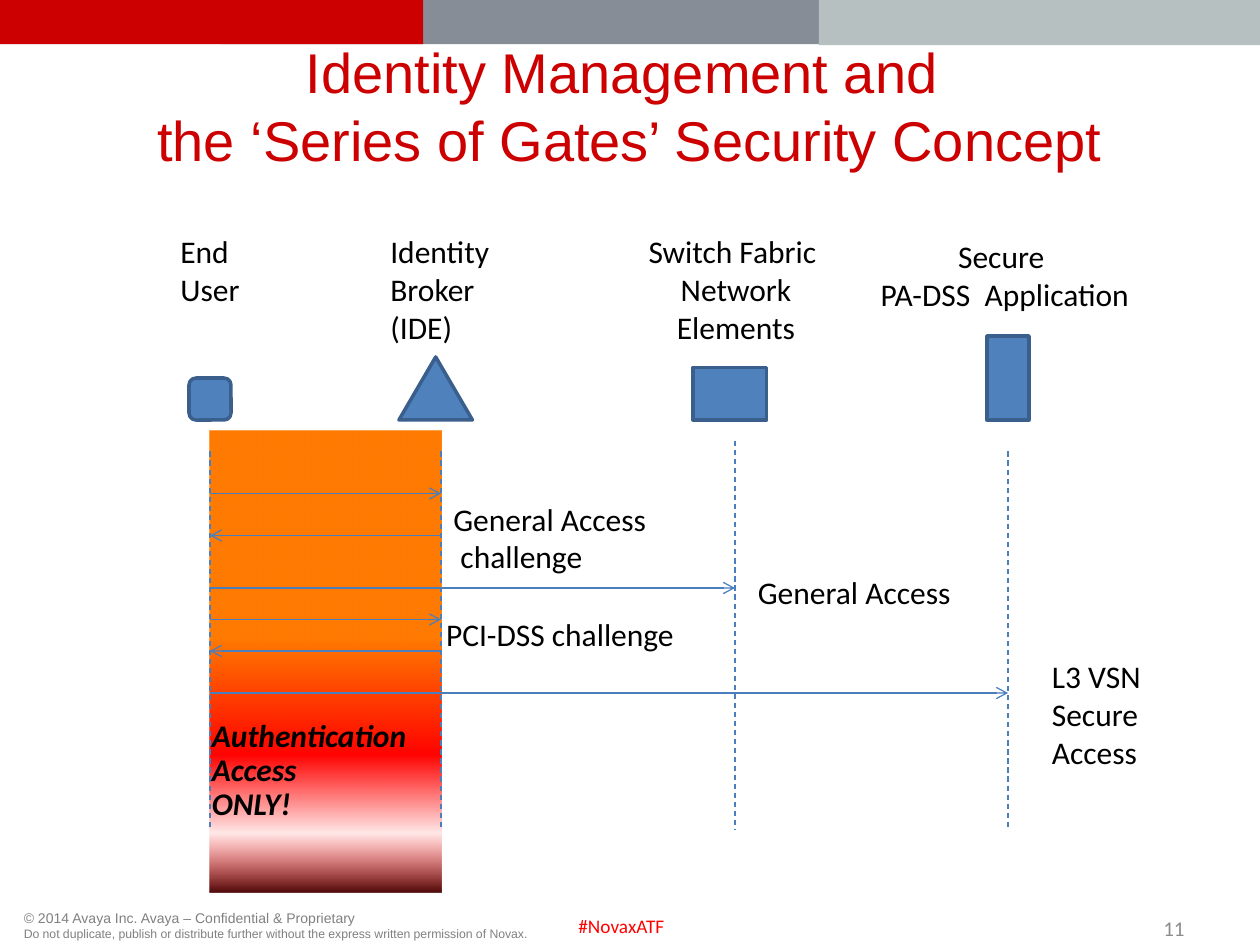
import pptx
import pptx.dml.color
import pptx.enum.dml
import pptx.enum.shapes
import pptx.enum.text
import pptx.oxml
import pptx.oxml.ns
import pptx.util
from lxml import etree

COLS, ROWS = 120, 90
SHAPE = pptx.enum.shapes.MSO_SHAPE
ALIGN = pptx.enum.text.PP_ALIGN
ANCHOR = pptx.enum.text.MSO_ANCHOR
AUTO = pptx.enum.text.MSO_AUTO_SIZE


def rgb(value):
    return pptx.dml.color.RGBColor.from_string(value)


class Diagram:
    red, black, gray = "CC0000", "000000", "808080"
    blue, outline, wire = "4F81BD", "3A5F8C", "4B7EBC"
    body, heading = "Calibri", "Arial"

    def __init__(self, prs):
        self.cell_w = prs.slide_width / COLS
        self.cell_h = prs.slide_height / ROWS
        self.s = prs.slides.add_slide(prs.slide_layouts[6])

    def x(self, cols):
        return round(cols * self.cell_w)

    def y(self, rows):
        return round(rows * self.cell_h)

    def box(self, left, top, width, height):
        return self.x(left), self.y(top), self.x(width), self.y(height)

    def shape(self, kind, left, top, width, height, fill, line=None):
        sp = self.s.shapes.add_shape(kind, *self.box(left, top, width, height))
        sp.shadow.inherit = False
        sp.fill.solid()
        sp.fill.fore_color.rgb = rgb(fill)
        if line:
            sp.line.color.rgb = rgb(line)
            sp.line.width = pptx.util.Pt(2)
        else:
            sp.line.fill.background()
        return sp

    def gradient(self, left, top, width, height, stops):
        sp = self.shape(SHAPE.RECTANGLE, left, top, width, height, stops[0][1])
        sp.fill.gradient()
        sp.fill.gradient_angle = 270
        gs_list = sp.fill._fill._gradFill.find(pptx.oxml.ns.qn("a:gsLst"))
        for gs in list(gs_list):
            gs_list.remove(gs)
        for position, color, opacity in stops:
            gs = etree.SubElement(gs_list, pptx.oxml.ns.qn("a:gs"), pos=str(position * 1000))
            clr = etree.SubElement(gs, pptx.oxml.ns.qn("a:srgbClr"), val=color)
            if opacity < 100:
                etree.SubElement(clr, pptx.oxml.ns.qn("a:alpha"), val=str(opacity * 1000))

    def text(self, left, top, width, height, lines, size=18, color=black, font=body,
             align=ALIGN.LEFT, anchor=ANCHOR.TOP, wrap=False, grow=True,
             emphasis=False, spacing=None):
        tf = self.s.shapes.add_textbox(*self.box(left, top, width, height)).text_frame
        tf.word_wrap = wrap
        tf.auto_size = AUTO.SHAPE_TO_FIT_TEXT if grow else AUTO.NONE
        tf.vertical_anchor = anchor
        for i, line in enumerate(lines):
            p = tf.add_paragraph() if i else tf.paragraphs[0]
            p.text = line
            p.alignment = align
            if spacing:
                p.line_spacing = spacing
            p.font.name = font
            p.font.size = pptx.util.Pt(size)
            p.font.color.rgb = rgb(color)
            if emphasis:
                p.font.bold = p.font.italic = True
        return tf

    def line(self, x1, y1, x2, y2, dashed=False, arrow=False):
        c = self.s.shapes.add_connector(
            pptx.enum.shapes.MSO_CONNECTOR.STRAIGHT,
            self.x(x1), self.y(y1), self.x(x2), self.y(y2))
        c.line.color.rgb = rgb(self.wire)
        c.line.width = pptx.util.Pt(0.75)
        if dashed:
            c.line.dash_style = pptx.enum.dml.MSO_LINE.DASH
        if arrow:
            etree.SubElement(c.line._get_or_add_ln(), pptx.oxml.ns.qn("a:tailEnd"), type="arrow")
        etree.SubElement(c._element.spPr, pptx.oxml.ns.qn("a:effectLst"))


def main():
    prs = pptx.Presentation()
    prs.slide_width = pptx.util.Inches(10)
    prs.slide_height = pptx.util.Inches(7.5)
    d = Diagram(prs)

    for left, width, height, fill in [(21, 57, 4.2, "868D96"),
                                      (78, 42, 4.3, "B7C0C0"),
                                      (0, 40.3, 4.2, d.red)]:
        d.shape(SHAPE.RECTANGLE, left, 0, width, height, fill)

    tf = d.text(1.08, 86, 52, 4,
                ["© 2014 Avaya Inc. Avaya – Confidential & Proprietary",
                 "Do not duplicate, publish or distribute further without "
                 "the express written permission of Novax."],
                size=8, color=d.gray, font=d.heading, wrap=True, grow=False)
    tf.paragraphs[1].font.size = pptx.util.Pt(7)
    d.text(53.9, 86.5, 12.1, 3.5, ["#NovaxATF"], size=11, color="FF0000")
    d.text(86, 86.75, 28, 3.25, ["11"], size=12, color="8C8C8C",
           align=ALIGN.RIGHT, anchor=ANCHOR.MIDDLE, wrap=True, grow=False)

    user, broker, network, application = 20, 42, 70, 96
    d.gradient(user, 41, broker - user, 44,
               [(45, "FF7A00", 100), (70, "FF0300", 100),
                (87, "FF0000", 9), (100, "4D0808", 100)])
    d.text(6, 6, 108, 8,
           ["Identity Management and \vthe ‘Series of Gates’ Security Concept"],
           size=32, color=d.red, font=d.heading, align=ALIGN.CENTER,
           anchor=ANCHOR.MIDDLE, wrap=True, grow=False)

    for actor, top in [(user, 43), (broker, 43), (network, 42), (application, 43)]:
        d.line(actor, top, actor, 79, dashed=True)

    icon_base = 40
    for kind, left, width, height in [(SHAPE.ROUNDED_RECTANGLE, 18, 4, 4),
                                      (SHAPE.ISOSCELES_TRIANGLE, 38, 7, 6),
                                      (SHAPE.RECTANGLE, 66, 7, 5),
                                      (SHAPE.RECTANGLE, 94, 4, 8)]:
        d.shape(kind, left, icon_base - height, width, height, d.blue, d.outline)

    for start, end, row in [(user, broker, 47), (broker, user, 51),
                            (user, network, 56), (user, broker, 59),
                            (broker, user, 62), (user, application, 66)]:
        d.line(start, row, end, row, arrow=True)

    for left, top, width, height, lines, align in [
            (16, 21.5, 8.2, 8.5, ["End", "User"], ALIGN.LEFT),
            (36, 21.5, 12.2, 12.1, ["Identity", "Broker", "(IDE)"], ALIGN.LEFT),
            (58.2, 21.5, 23.8, 12.1, ["Switch Fabric ", "Network", "Elements"], ALIGN.CENTER),
            (80.8, 22, 29.8, 8.5, ["Secure ", "PA-DSS  Application"], ALIGN.CENTER),
            (42, 47, 23.6, 8.5, ["General Access", " challenge"], ALIGN.LEFT),
            (41.3, 58, 28.6, 4.8, ["PCI-DSS challenge"], ALIGN.LEFT),
            (71, 54, 21, 4.8, ["General Access"], ALIGN.LEFT),
            (99, 62, 12.8, 12.1, ["L3 VSN", "Secure", "Access"], ALIGN.LEFT)]:
        d.text(left, top, width, height, lines, align=align)

    d.text(19, 68, 12, 12, ["Authentication", "Access", "ONLY!"],
           grow=False, emphasis=True, spacing=0.9)

    prs.save("out.pptx")


if __name__ == "__main__":
    main()
